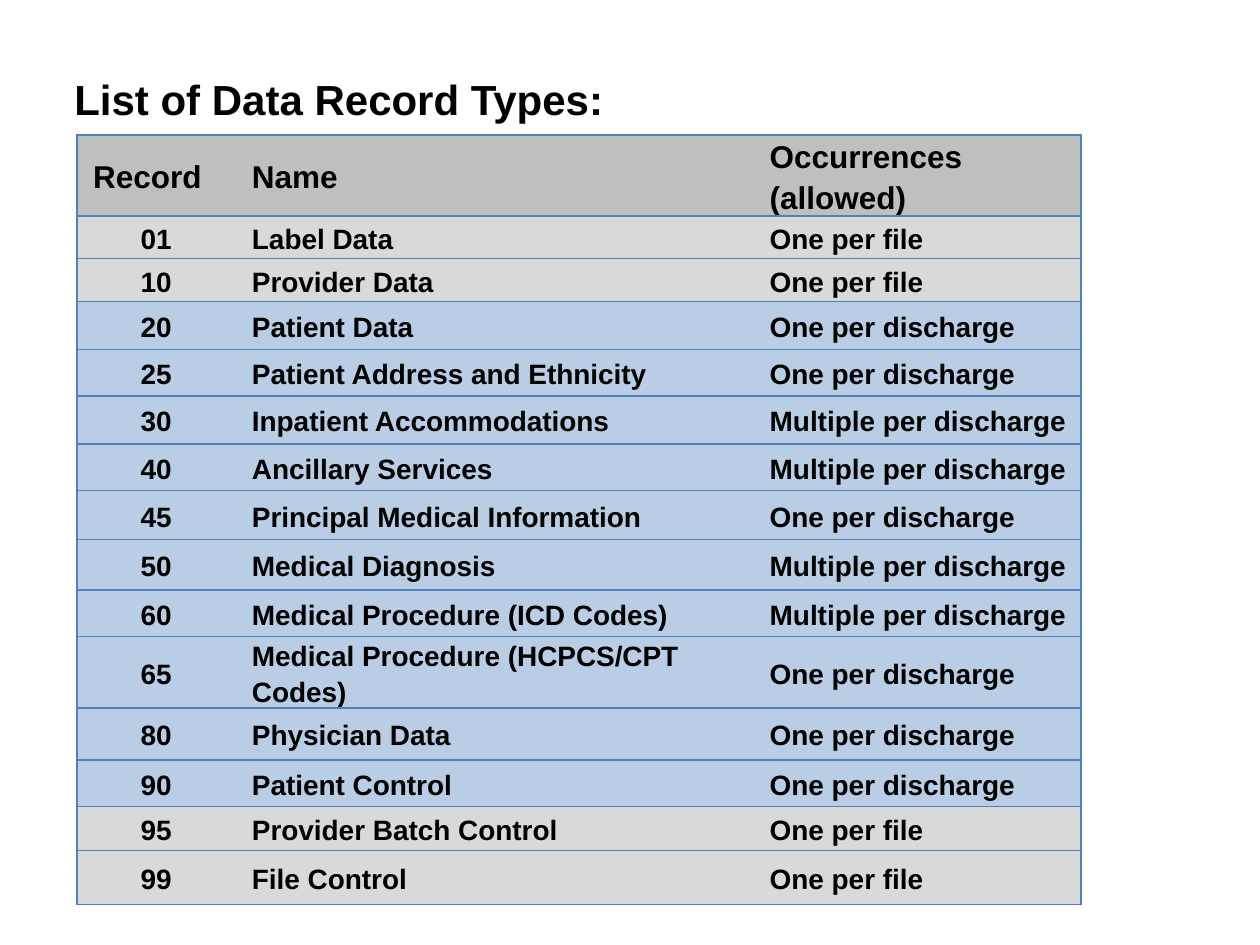
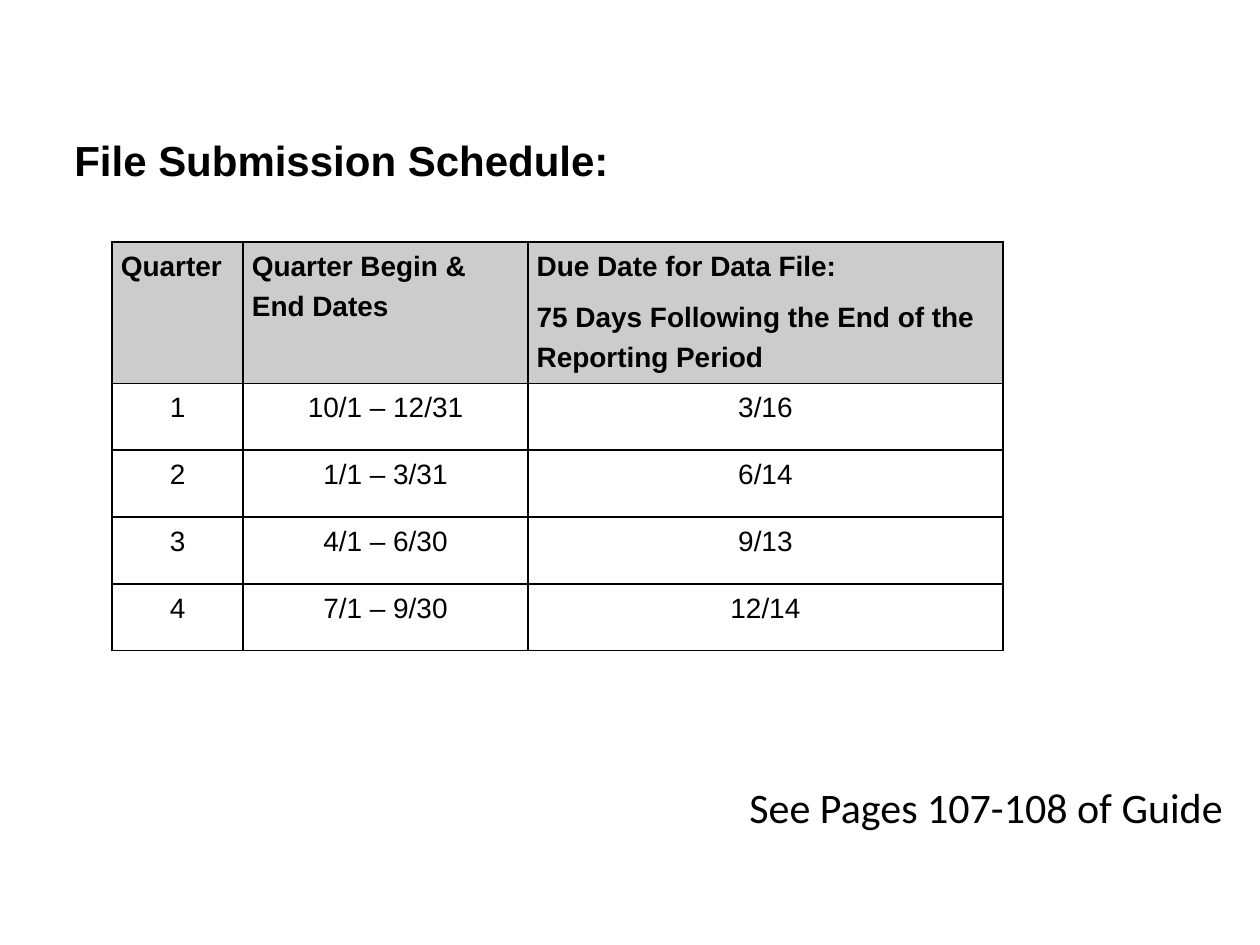
import pptx
import pptx.dml.color
import pptx.enum.text
import pptx.oxml.ns
import pptx.util
from lxml import etree

RGBColor = pptx.dml.color.RGBColor
Pt = pptx.util.Pt
ALIGN = pptx.enum.text.PP_ALIGN
ANCHOR = pptx.enum.text.MSO_ANCHOR

BLACK = RGBColor(0x00, 0x00, 0x00)
HEADER_GREY = RGBColor(0xBF, 0xBF, 0xBF)
FILE_GREY = RGBColor(0xD9, 0xD9, 0xD9)
DISCHARGE_BLUE = RGBColor(0xB9, 0xCD, 0xE5)
RULE_BLUE = RGBColor(0x4F, 0x81, 0xBD)
SCHEDULE_GREY = RGBColor(0xCC, 0xCC, 0xCC)

GRID_COLUMNS, GRID_ROWS = 100, 75
PLAIN_TABLE_STYLE = "{2D5ABB26-0587-4C30-8999-92F81FD0307C}"
TITLE_ONLY_LAYOUT = 5

PER_FILE = "One per file"
PER_DISCHARGE = "One per discharge"
MULTIPLE = "Multiple per discharge"

# Record, name lines, occurrences, row height in grid rows
RECORD_TYPES = [
    ("01", ["Label Data"], PER_FILE, 3.4),
    ("10", ["Provider Data"], PER_FILE, 3.4),
    ("20", ["Patient Data"], PER_DISCHARGE, 3.8),
    ("25", ["Patient Address and Ethnicity"], PER_DISCHARGE, 3.7),
    ("30", ["Inpatient Accommodations"], MULTIPLE, 3.8),
    ("40", ["Ancillary Services"], MULTIPLE, 3.7),
    ("45", ["Principal Medical Information"], PER_DISCHARGE, 3.9),
    ("50", ["Medical Diagnosis"], MULTIPLE, 4),
    ("60", ["Medical Procedure (ICD Codes)"], MULTIPLE, 3.7),
    ("65", ["Medical Procedure (HCPCS/CPT", "Codes)"], PER_DISCHARGE, 5.1),
    ("80", ["Physician Data"], PER_DISCHARGE, 4.1),
    ("90", ["Patient Control"], PER_DISCHARGE, 3.7),
    ("95", ["Provider Batch Control"], PER_FILE, 3.5),
    ("99", ["File Control"], PER_FILE, 4.3),
]

SCHEDULE_HEADER = [
    ["Quarter"],
    ["Quarter Begin & End Dates"],
    ["Due Date for Data File:",
     "75 Days Following the End of the Reporting Period"],
]
SCHEDULE = [
    ("1", "10/1 – 12/31", "3/16"),
    ("2", "1/1 – 3/31", "6/14"),
    ("3", "4/1 – 6/30", "9/13"),
    ("4", "7/1 – 9/30", "12/14"),
]


class Deck:
    """Holds the shared style and the slide being built."""

    font = "Arial"
    cell_inset = 0.7

    def __init__(self):
        self.presentation = pptx.Presentation()
        self.presentation.slide_width = pptx.util.Inches(10)
        self.presentation.slide_height = pptx.util.Inches(7.5)
        self.slide = None

    def x(self, columns):
        return round(self.presentation.slide_width * columns / GRID_COLUMNS)

    def y(self, rows):
        return round(self.presentation.slide_height * rows / GRID_ROWS)

    def area(self, left, top, width, height):
        return self.x(left), self.y(top), self.x(width), self.y(height)

    def run(self, paragraph, text, size, bold=False, font=None):
        run = paragraph.add_run()
        run.text = text
        run.font.name = font or self.font
        run.font.size = Pt(size)
        run.font.bold = bold
        run.font.color.rgb = BLACK

    def new_slide(self, heading, *box):
        layout = self.presentation.slide_layouts[TITLE_ONLY_LAYOUT]
        self.slide = self.presentation.slides.add_slide(layout)
        title = self.slide.shapes.title
        title.left, title.top, title.width, title.height = self.area(*box)
        title.text_frame.vertical_anchor = ANCHOR.MIDDLE
        paragraph = title.text_frame.paragraphs[0]
        paragraph.alignment = ALIGN.LEFT
        self.run(paragraph, heading, 24, bold=True)

    def note(self, text, *box):
        frame = self.slide.shapes.add_textbox(*self.area(*box)).text_frame
        frame.word_wrap = False
        frame.auto_size = pptx.enum.text.MSO_AUTO_SIZE.SHAPE_TO_FIT_TEXT
        self.run(frame.paragraphs[0], text, 24, font="Calibri")

    def table(self, left, top, widths, heights):
        box = self.area(left, top, sum(widths), sum(heights))
        frame = self.slide.shapes.add_table(len(heights), len(widths), *box)
        table = frame.table
        table.first_row = table.horz_banding = False
        style = frame._element.find(".//" + pptx.oxml.ns.qn("a:tableStyleId"))
        style.text = PLAIN_TABLE_STYLE
        for column, width in zip(table.columns, widths):
            column.width = self.x(width)
        for row, height in zip(table.rows, heights):
            row.height = self.y(height)
        return table

    def borders(self, cell, sides, color):
        properties = cell._tc.get_or_add_tcPr()
        for side in sides:
            line = etree.SubElement(properties, pptx.oxml.ns.qn(f"a:ln{side}"),
                                    w=str(Pt(1)))
            fill = etree.SubElement(line, pptx.oxml.ns.qn("a:solidFill"))
            etree.SubElement(fill, pptx.oxml.ns.qn("a:srgbClr"), val=str(color))

    def cell(self, cell, lines, size, bold, align, spacing, fill=None,
             anchor=ANCHOR.TOP, gap=0, extra_left=0, extra_right=0):
        cell.margin_left = self.x(self.cell_inset + extra_left)
        cell.margin_right = self.x(self.cell_inset + extra_right)
        cell.margin_top = cell.margin_bottom = 0
        cell.vertical_anchor = anchor
        if fill is None:
            cell.fill.background()
        else:
            cell.fill.solid()
            cell.fill.fore_color.rgb = fill
        for index, text in enumerate(lines):
            frame = cell.text_frame
            paragraph = frame.add_paragraph() if index else frame.paragraphs[0]
            paragraph.alignment = align
            paragraph.line_spacing = spacing
            paragraph.space_before = Pt(gap if index else 0)
            paragraph.space_after = Pt(gap)
            self.run(paragraph, text, size, bold)


def record_types_slide(deck):
    deck.new_slide("List of Data Record Types:", 4.9, 4.9, 84.4, 5.8)
    header = ("Record", ["Name"], "Occurrences (allowed)", 6.4)
    records = [header] + RECORD_TYPES
    table = deck.table(6.1, 10.7, [12.6, 41.7, 25.4],
                       [record[-1] for record in records])
    for row, (code, name, occurrences, _) in enumerate(records):
        is_header = row == 0
        if is_header:
            fill = HEADER_GREY
        else:
            fill = FILE_GREY if occurrences == PER_FILE else DISCHARGE_BLUE
        columns = [
            ([code], ALIGN.CENTER, "LTB", 0, 1.4 if is_header else 0),
            (name, ALIGN.LEFT, "TB", 0.6, 0),
            ([occurrences], ALIGN.LEFT, "RTB", 0, 0),
        ]
        for column, (lines, align, sides, left, right) in enumerate(columns):
            cell = table.cell(row, column)
            deck.borders(cell, sides, RULE_BLUE)
            deck.cell(cell, lines, 18 if is_header else 16, True, align, 1.15,
                      fill, ANCHOR.MIDDLE, extra_left=left, extra_right=right)


def schedule_slide(deck):
    deck.new_slide("File Submission Schedule:", 4.9, 7.7, 66.8, 10)
    deck.note("See Pages 107-108 of Guide", 58.5, 61.5, 39.6, 5)
    quarters = [[[text] for text in quarter] for quarter in SCHEDULE]
    table = deck.table(8.9, 19.2, [10.4, 22.6, 37.7],
                       [10.6] + [5.3] * len(quarters))
    for row, entries in enumerate([SCHEDULE_HEADER] + quarters):
        is_header = row == 0
        for column, lines in enumerate(entries):
            cell = table.cell(row, column)
            deck.borders(cell, "LRTB", BLACK)
            deck.cell(cell, lines, 16, is_header,
                      ALIGN.LEFT if is_header else ALIGN.CENTER, 1.3,
                      SCHEDULE_GREY if is_header else None, gap=3)


def main():
    deck = Deck()
    record_types_slide(deck)
    schedule_slide(deck)
    deck.presentation.save("out.pptx")


if __name__ == "__main__":
    main()
